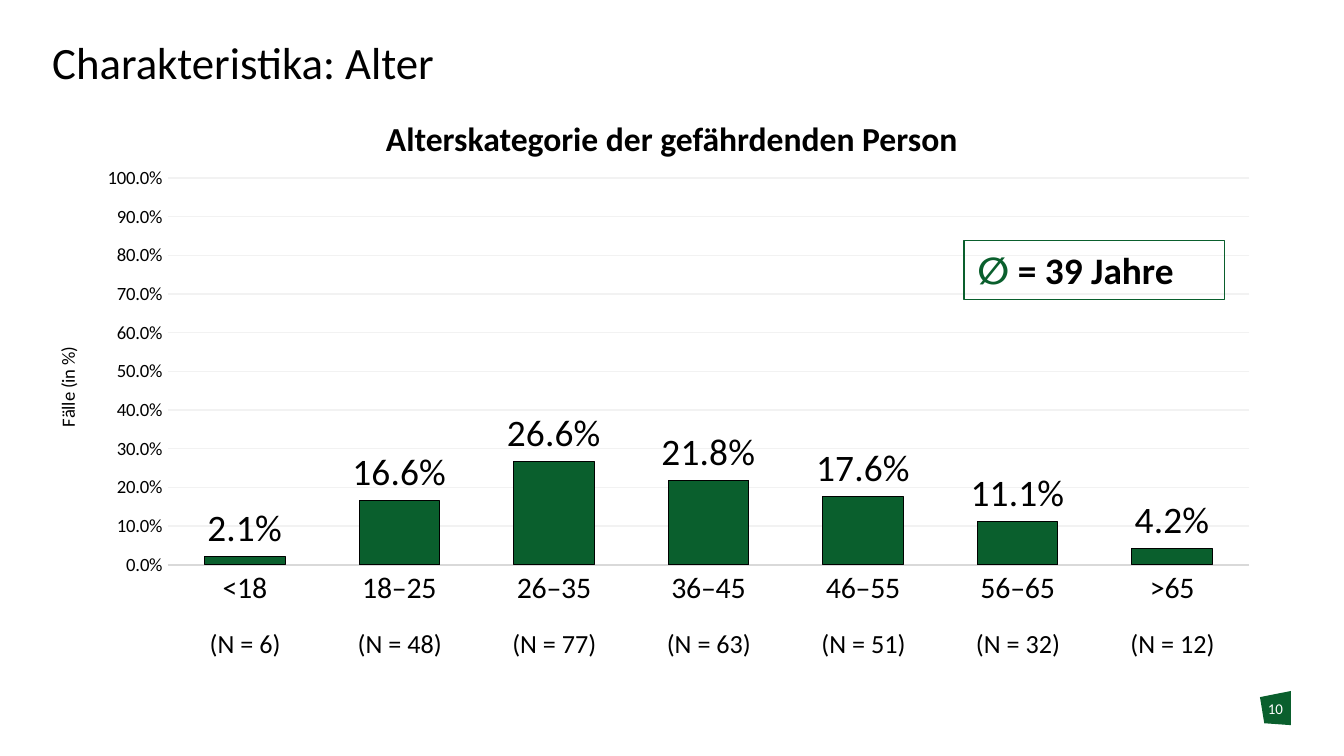
from dataclasses import dataclass

from lxml import etree
from pptx import Presentation
from pptx.chart.data import CategoryChartData
from pptx.dml.color import RGBColor
from pptx.enum.chart import XL_CHART_TYPE, XL_LABEL_POSITION, XL_TICK_MARK
from pptx.enum.shapes import MSO_SHAPE
from pptx.enum.text import MSO_ANCHOR, PP_ALIGN
from pptx.oxml.ns import qn
from pptx.util import Pt

COLUMN = XL_CHART_TYPE.COLUMN_CLUSTERED
OUTSIDE = XL_LABEL_POSITION.OUTSIDE_END
NO_TICK = XL_TICK_MARK.NONE
RECT = MSO_SHAPE.RECTANGLE
LEFT, CENTER = PP_ALIGN.LEFT, PP_ALIGN.CENTER
TOP, MIDDLE, BOTTOM = MSO_ANCHOR.TOP, MSO_ANCHOR.MIDDLE, MSO_ANCHOR.BOTTOM

GREEN = RGBColor(0x0A, 0x5F, 0x2D)
BLACK = RGBColor(0, 0, 0)
WHITE = RGBColor(255, 255, 255)
GRID = RGBColor(0xF2, 0xF2, 0xF2)
AXIS = RGBColor(0xD9, 0xD9, 0xD9)
FACE = "Calibri"
PLOT = {"x": 0.093, "y": 0.042, "w": 0.873, "h": 0.762}


@dataclass
class Group:
    name: str
    share: float
    count: int


@dataclass
class Label:
    text: str
    left: float
    top: float
    width: float
    height: float
    size: float
    color: RGBColor = BLACK
    bold: bool = False
    align: PP_ALIGN = CENTER
    anchor: MSO_ANCHOR = TOP
    inset: bool = True
    spacing: float = 1.0


GROUPS = [
    Group("<18", 0.021, 6),
    Group("18–25", 0.166, 48),
    Group("26–35", 0.266, 77),
    Group("36–45", 0.218, 63),
    Group("46–55", 0.176, 51),
    Group("56–65", 0.111, 32),
    Group(">65", 0.042, 12),
]


def style(font, size: float, color: RGBColor = BLACK, bold: bool = False) -> None:
    form = {"name": FACE, "size": Pt(size), "bold": bold}
    for key, value in form.items():
        setattr(font, key, value)
    font.color.rgb = color


def add_label(slide, label: Label) -> None:
    box = slide.shapes.add_textbox(
        Pt(label.left), Pt(label.top), Pt(label.width), Pt(label.height))
    frame = box.text_frame
    form = {"word_wrap": True, "vertical_anchor": label.anchor}
    if not label.inset:
        for side in ("left", "right", "top", "bottom"):
            form[f"margin_{side}"] = 0
    for key, value in form.items():
        setattr(frame, key, value)
    para = frame.paragraphs[0]
    para.alignment = label.align
    para.line_spacing = label.spacing
    run = para.add_run()
    run.text = label.text
    style(run.font, label.size, label.color, label.bold)


def set_plot(chart) -> None:
    area = chart.element.find(".//" + qn("c:plotArea"))
    for old in area.findall(qn("c:layout")):
        area.remove(old)
    layout = etree.Element(qn("c:layout"))
    area.insert(0, layout)
    manual = etree.SubElement(layout, qn("c:manualLayout"))
    parts = {"layoutTarget": "inner", "xMode": "edge", "yMode": "edge", **PLOT}
    for key, value in parts.items():
        etree.SubElement(manual, qn("c:" + key)).set("val", str(value))


def add_bars(slide) -> None:
    data = CategoryChartData(number_format="0.0%")
    data.categories = [group.name for group in GROUPS]
    data.add_series("Series 1", [group.share for group in GROUPS])
    chart = slide.shapes.add_chart(
        COLUMN, Pt(28), Pt(84), Pt(664), Pt(272), data).chart
    chart.has_legend = chart.has_title = False
    style(chart.font, 10)
    set_plot(chart)

    # Columns and values
    plot = chart.plots[0]
    form = {"gap_width": 92, "overlap": -27,
            "vary_by_categories": False, "has_data_labels": True}
    for key, value in form.items():
        setattr(plot, key, value)
    bars = plot.series[0].format
    bars.fill.solid()
    bars.fill.fore_color.rgb = GREEN
    bars.line.color.rgb = BLACK
    bars.line.width = Pt(0.5)
    marks = plot.data_labels
    form = {"show_value": True, "position": OUTSIDE,
            "number_format": "0.0%", "number_format_is_linked": False}
    for key, value in form.items():
        setattr(marks, key, value)
    style(marks.font, 20)

    # Axes
    for axis, size in ((chart.category_axis, 16), (chart.value_axis, 10)):
        axis.major_tick_mark = axis.minor_tick_mark = NO_TICK
        style(axis.tick_labels.font, size)
    base = chart.category_axis.format.line
    base.color.rgb = AXIS
    base.width = Pt(0.75)
    scale = chart.value_axis
    form = {"minimum_scale": 0, "maximum_scale": 1, "major_unit": 0.1,
            "has_major_gridlines": True}
    for key, value in form.items():
        setattr(scale, key, value)
    scale.tick_labels.number_format = "0.0%"
    scale.tick_labels.number_format_is_linked = False
    scale.format.line.fill.background()
    grid = scale.major_gridlines.format.line
    grid.color.rgb = GRID
    grid.width = Pt(0.75)
    run = scale.axis_title.text_frame.paragraphs[0].add_run()
    run.text = "Fälle (in %)"
    style(run.font, 10)


def add_mean(slide) -> None:
    box = slide.shapes.add_shape(RECT, Pt(516.5), Pt(129), Pt(139.5), Pt(31.5))
    box.shadow.inherit = False
    box.fill.background()
    box.line.color.rgb = GREEN
    box.line.width = Pt(0.75)
    frame = box.text_frame
    frame.word_wrap = True
    frame.vertical_anchor = TOP
    para = frame.paragraphs[0]
    para.alignment = LEFT
    for text, color in (("∅", GREEN), (" = 39 Jahre", BLACK)):
        run = para.add_run()
        run.text = text
        style(run.font, 20, color, True)


def add_badge(slide) -> None:
    path = slide.shapes.build_freeform(Pt(675), Pt(373.5))
    rest = ((691.6, 370.2), (691.6, 388.5), (677.3, 387.5))
    path.add_line_segments([(Pt(x), Pt(y)) for x, y in rest], close=True)
    badge = path.convert_to_shape()
    badge.shadow.inherit = False
    badge.fill.solid()
    badge.fill.fore_color.rgb = GREEN
    badge.line.fill.background()


def main() -> None:
    deck = Presentation()
    deck.slide_width, deck.slide_height = Pt(720), Pt(405)
    slide = deck.slides.add_slide(deck.slide_layouts[6])

    # Title and page number
    add_badge(slide)
    add_label(slide, Label("Charakteristika: Alter", 28, 0, 664, 48, 24,
                           align=LEFT, anchor=BOTTOM, inset=False, spacing=0.9))
    add_label(slide, Label("10", 675, 375, 16.6, 21.6, 8, WHITE, inset=False))

    # Chart with heading
    add_bars(slide)
    add_label(slide, Label("Alterskategorie der gefährdenden Person", 28, 66,
                           664, 16, 18, bold=True, anchor=MIDDLE))

    # Case counts below the columns
    for i, group in enumerate(GROUPS):
        add_label(slide, Label(f"(N = {group.count})", 90.7 + 82.8 * i, 332.6,
                               81.4, 24.5, 14))

    add_mean(slide)
    deck.save("out.pptx")


if __name__ == "__main__":
    main()
